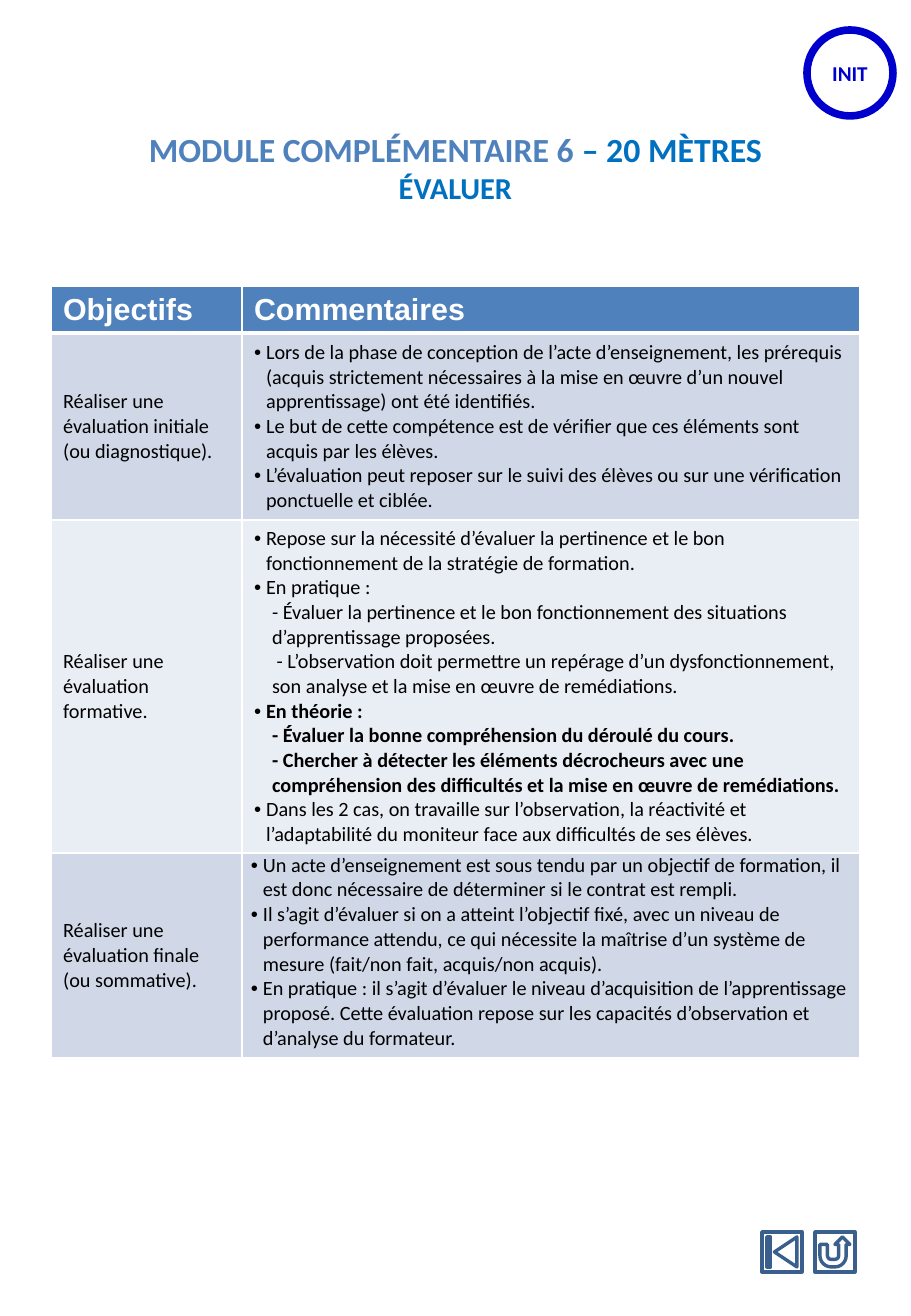
"""Builds the portrait training page on the three kinds of evaluation."""
from lxml.etree import SubElement
from pptx import Presentation
from pptx.dml.color import RGBColor
from pptx.enum.shapes import MSO_SHAPE
from pptx.enum.text import MSO_ANCHOR, PP_ALIGN
from pptx.oxml import parse_xml
from pptx.oxml.ns import nsdecls, qn
from pptx.util import Pt

PX = 914400 / 121.5
THEME = {
    "blue": "4F81BD", "accent": "0070C0", "badge": "0000CC", "button": "3A5F8C",
    "white": "FFFFFF", "black": "000000", "bands": ("D0D8E8", "E9EDF4"),
    "title": 20, "subtitle": 18, "header": 18, "body": 12, "badge_size": 12.5,
    "font": "Calibri", "header_font": "Arial",
}


def px(length):
    return round(length * PX)


def style(span, size, color, bold=True, font=THEME["font"]):
    span.font.name, span.font.size, span.font.bold = font, Pt(size), bold
    span.font.color.rgb = RGBColor.from_string(color)


deck = Presentation()
deck.slide_width, deck.slide_height = px(911), px(1316)
page = deck.slides.add_slide(deck.slide_layouts[5])

title = page.shapes.title
title.left, title.top, title.width, title.height = px(91), px(123), px(729), px(90)
frame = title.text_frame
frame.word_wrap = True
frame.vertical_anchor = MSO_ANCHOR.TOP
title_lines = [
    [("MODULE COMPLÉMENTAIRE 6 ", "title", "blue"), ("– 20 MÈTRES", "title", "accent")],
    [("ÉVALUER", "subtitle", "accent")],
]
for index, line in enumerate(title_lines):
    para = frame.add_paragraph() if index else frame.paragraphs[0]
    para.alignment = PP_ALIGN.CENTER
    for text, size, color in line:
        span = para.add_run()
        span.text = text
        style(span, THEME[size], THEME[color])

badge = page.shapes.add_shape(MSO_SHAPE.OVAL, px(807), px(30), px(86), px(86))
badge.shadow.inherit = False
badge.fill.solid()
badge.fill.fore_color.rgb = RGBColor.from_string(THEME["white"])
badge.line.color.rgb = RGBColor.from_string(THEME["badge"])
badge.line.width = Pt(4.5)
badge.text_frame.text = "INIT"
badge.text_frame.word_wrap = False
badge.text_frame.vertical_anchor = MSO_ANCHOR.MIDDLE
badge_para = badge.text_frame.paragraphs[0]
badge_para.alignment = PP_ALIGN.CENTER
style(badge_para.runs[0], THEME["badge_size"], THEME["badge"])

BULLET, DETAIL, BOLD_BULLET, BOLD_DETAIL = "bullet", "detail", "bold bullet", "bold detail"
rows = [
    ([("", "Objectifs")], [("", "Commentaires")]),
    ([("", "Réaliser une évaluation initiale (ou diagnostique).")], [
        (BULLET, "Lors de la phase de conception de l’acte d’enseignement, les prérequis (acquis strictement nécessaires à la mise en œuvre d’un nouvel apprentissage) ont été identifiés."),
        (BULLET, "Le but de cette compétence est de vérifier que ces éléments sont acquis par les élèves."),
        (BULLET, "L’évaluation peut reposer sur le suivi des élèves ou sur une vérification ponctuelle et ciblée."),
    ]),
    ([("", "Réaliser une évaluation formative.")], [
        (BULLET, "Repose sur la nécessité d’évaluer la pertinence et le bon fonctionnement de la stratégie de formation."),
        (BULLET, "En pratique :"),
        (DETAIL, "- Évaluer la pertinence et le bon fonctionnement des situations d’apprentissage proposées."),
        (DETAIL, " - L’observation doit permettre un repérage d’un dysfonctionnement, son analyse et la mise en œuvre de remédiations."),
        (BOLD_BULLET, "En théorie :"),
        (BOLD_DETAIL, "- Évaluer la bonne compréhension du déroulé du cours."),
        (BOLD_DETAIL, "- Chercher à détecter les éléments décrocheurs avec une compréhension des difficultés et la mise en œuvre de remédiations."),
        (BULLET, "Dans les 2 cas, on travaille sur l’observation, la réactivité et l’adaptabilité du moniteur face aux difficultés de ses élèves."),
    ]),
    ([("", "Réaliser une évaluation finale (ou sommative).")], [
        (BULLET, "Un acte d’enseignement est sous tendu par un objectif de formation, il est donc nécessaire de déterminer si le contrat est rempli."),
        (BULLET, "Il s’agit d’évaluer si on a atteint l’objectif fixé, avec un niveau de performance attendu, ce qui nécessite la maîtrise d’un système de mesure (fait/non fait, acquis/non acquis)."),
        (BULLET, "En pratique : il s’agit d’évaluer le niveau d’acquisition de l’apprentissage proposé. Cette évaluation repose sur les capacités d’observation et d’analyse du formateur."),
    ]),
]
widths, heights = (191, 618), (47, 187, 329, 205)
table = page.shapes.add_table(
    len(rows), len(widths), px(51), px(286), px(sum(widths)), px(sum(heights))).table
for column, width in zip(table.columns, widths):
    column.width = px(width)
for row, height in zip(table.rows, heights):
    row.height = px(height)

for row_index, contents in enumerate(rows):
    header = row_index == 0
    fill = THEME["blue"] if header else THEME["bands"][(row_index - 1) % 2]
    for column_index, paragraphs in enumerate(contents):
        cell = table.cell(row_index, column_index)
        cell.vertical_anchor = MSO_ANCHOR.MIDDLE
        cell.fill.solid()
        cell.fill.fore_color.rgb = RGBColor.from_string(fill)
        cell.text_frame.text = "\n".join(text for kind, text in paragraphs)
        for para, (kind, text) in zip(cell.text_frame.paragraphs, paragraphs):
            properties = para._p.get_or_add_pPr()
            if "bullet" in kind:
                properties.set("marL", str(px(12)))
                properties.set("indent", str(-px(12)))
                SubElement(properties, qn("a:buFont"), typeface="Arial")
                SubElement(properties, qn("a:buChar"), char="•")
            elif "detail" in kind:
                properties.set("marL", str(px(18)))
                properties.set("indent", "0")
            if header:
                style(para.runs[0], THEME["header"], THEME["white"], font=THEME["header_font"])
            else:
                style(para.runs[0], THEME["body"], THEME["black"], "bold" in kind)
        for order, side in enumerate("LRTB"):
            heavy = (header and side == "B") or (row_index == 1 and side == "T")
            cell._tc.get_or_add_tcPr().insert(order, parse_xml(
                f'<a:ln{side} {nsdecls("a")} w="{Pt(3 if heavy else 1)}"><a:solidFill>'
                f'<a:srgbClr val="{THEME["white"]}"/></a:solidFill></a:ln{side}>'))

final_comments = table.cell(3, 1)
final_comments.vertical_anchor = MSO_ANCHOR.TOP
final_comments.margin_left = final_comments.margin_right = px(9)
final_comments.margin_top = final_comments.margin_bottom = 0

for left, preset in ((762, MSO_SHAPE.ACTION_BUTTON_BEGINNING), (815, MSO_SHAPE.ACTION_BUTTON_RETURN)):
    button = page.shapes.add_shape(preset, px(left), px(1232), px(40), px(40))
    button.shadow.inherit = False
    button.fill.background()
    button.line.color.rgb = RGBColor.from_string(THEME["button"])
    button.line.width = Pt(2)

deck.save("out.pptx")
